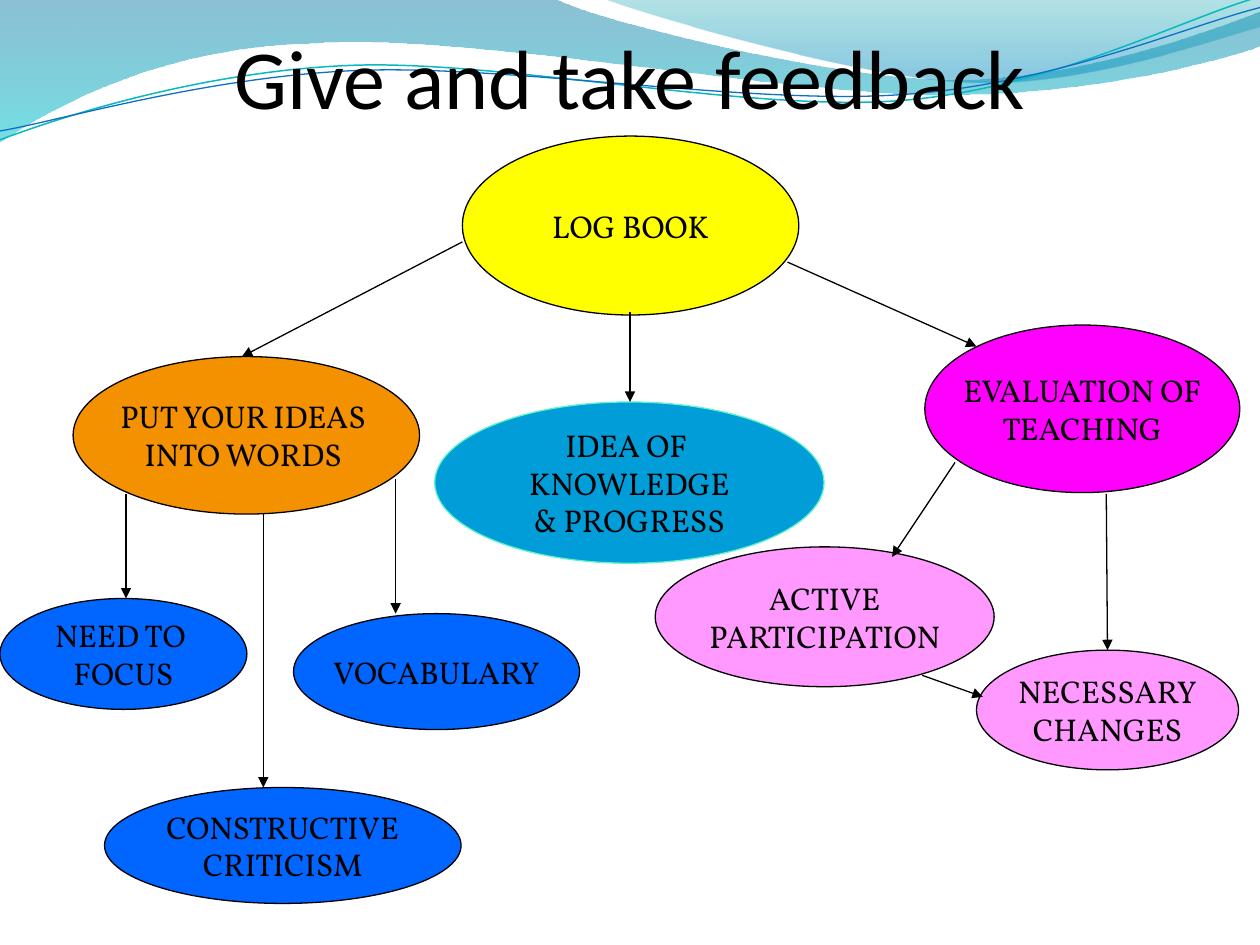
from lxml.etree import SubElement
from pptx import Presentation
from pptx.dml.color import RGBColor
from pptx.enum.shapes import MSO_CONNECTOR, MSO_SHAPE
from pptx.enum.text import MSO_ANCHOR, PP_ALIGN
from pptx.oxml.ns import qn
from pptx.oxml.xmlchemy import OxmlElement
from pptx.util import Inches, Pt

COLORS = {
    "black": "000000", "yellow": "FFFF00", "orange": "F49100", "sky": "009DD9",
    "mint": "5FF3CA", "magenta": "FF00FF", "blue": "0066FF", "pink": "FF99FF",
    "deep": "0074A1", "cyan": "00C6CF", "teal": "00A1A9", "ocean": "008BBF",
    "teal line": "0AB8BF", "blue line": "0F6FC6",
}

# A step of two numbers is a straight line; six numbers are a Bézier curve.
# Gradient stops are position, colour and opacity in percent.
BANDS = [
    ([(0, 0), (4.4, -0.01), (4.76, 0.17, 6.64, 0.63, 7.58, 0.63),
      (8.53, 0.63, 9.58, 0.26, 10, 0.09), (10.01, 0.36),
      (9.83, 0.44, 8.7, 0.76, 7.46, 0.75), (6.22, 0.75, 3.82, 0.28, 2.57, 0.34),
      (1.29, 0.36, 0.46, 0.83, -0.01, 1.13), (0, 0)],
     [(0, "deep", 45), (1, "cyan", 55)]),
    ([(4.79, -0.01), (5.09, 0.11, 6.82, 0.62, 7.69, 0.65),
      (8.56, 0.69, 9.61, 0.32, 10, 0.21), (10, 0), (4.79, -0.01)],
     [(0, "teal", 30), (0.8, "ocean", 45)]),
]
RIPPLES = [
    ([(0, 1.11), (0.48, 0.93, 1.58, 0.57, 2.77, 0.52),
      (3.95, 0.47, 5.93, 0.89, 7.13, 0.8), (8.33, 0.71, 9.38, 0.15, 9.98, -0.02)],
     "teal line", 0.85),
    ([(0, 1.04), (0.47, 0.96, 1.64, 0.61, 2.83, 0.56),
      (4.03, 0.51, 5.97, 0.84, 7.17, 0.75), (8.36, 0.67, 9.41, 0.21, 10, 0.06)],
     "blue line", 0.75),
]
BUBBLES = [
    (["LOG BOOK"], (3.67, 1.08, 2.67, 1.42), "yellow", "black"),
    (["PUT YOUR IDEAS ", "INTO WORDS "], (0.58, 2.83, 2.75, 1.25), "orange", "black"),
    (["IDEA OF ", "KNOWLEDGE", "& PROGRESS"], (3.45, 3.19, 3.09, 1.28), "sky", "mint"),
    (["EVALUATION OF", "TEACHING"], (7.34, 2.58, 2.5, 1.33), "magenta", "black"),
    (["NEED TO ", "FOCUS"], (0, 4.75, 1.96, 0.88), "blue", "black"),
    (["VOCABULARY"], (2.33, 4.87, 2.27, 0.92), "blue", "black"),
    (["ACTIVE", "PARTICIPATION"], (5.2, 4.34, 2.69, 1.11), "pink", "black"),
    (["NECESSARY", "CHANGES"], (7.75, 5.16, 2.08, 0.95), "pink", "black"),
    (["CONSTRUCTIVE", "CRITICISM"], (0.83, 6.25, 2.83, 0.92), "blue", "black"),
]
ARROWS = [
    (6.25, 2.08, 7.75, 2.75), (5, 2.48, 5, 3.19), (3.67, 1.92, 1.92, 2.83),
    (8.78, 3.92, 8.79, 5.16), (7.32, 5.36, 7.8, 5.53), (7.58, 3.67, 7.08, 4.42),
    (1, 3.92, 1, 4.75), (2.09, 4.07, 2.09, 6.25), (3.14, 3.8, 3.14, 4.87),
]


def rgb(name):
    return RGBColor.from_string(COLORS[name])


def set_line(line, color, width=0.75):
    line.color.rgb = rgb(color)
    line.width = Pt(width)


def write_lines(tf, lines, font_name, size):
    for i, text in enumerate(lines):
        p = tf.paragraphs[0] if i == 0 else tf.add_paragraph()
        p.alignment = PP_ALIGN.CENTER
        r = p.add_run()
        r.text = text
        for key, value in {"name": font_name, "size": Pt(size)}.items():
            setattr(r.font, key, value)
        r.font.color.rgb = rgb("black")


def bend_segments(sp, steps):
    """Join the three straight segments of each curved step into one Bézier."""
    segments = iter(list(sp.element.iter(qn("a:lnTo"))))
    for step in steps[1:]:
        group = [next(segments) for _ in range(len(step) // 2)]
        if len(group) == 3:
            curve = OxmlElement("a:cubicBezTo")
            group[0].addprevious(curve)
            for segment in group:
                curve.append(segment[0])
                segment.getparent().remove(segment)


def add_outline(s, left, top, steps, close):
    points = [(Inches(left + step[i]), Inches(top + step[i + 1]))
              for step in steps for i in range(0, len(step), 2)]
    builder = s.shapes.build_freeform(*points[0])
    builder.add_line_segments(points[1:], close=close)
    sp = builder.convert_to_shape()
    sp.shadow.inherit = False
    bend_segments(sp, steps)
    return sp


def fill_gradient(sp, stops):
    sp.fill.gradient()
    sp.fill.gradient_angle = 270
    for stop, (position, color, _) in zip(sp.fill.gradient_stops, stops):
        stop.position = position
        stop.color.rgb = rgb(color)
    colors = sp.element.spPr.find(qn("a:gradFill")).iter(qn("a:srgbClr"))
    for color, (_, _, opacity) in zip(colors, stops):
        SubElement(color, qn("a:alpha"), val=str(opacity * 1000))


def draw_waves(s, left, top):
    for steps, stops in BANDS:
        sp = add_outline(s, left, top, steps, close=True)
        fill_gradient(sp, stops)
        sp.line.fill.background()
    for steps, color, width in RIPPLES:
        sp = add_outline(s, left, top, steps, close=False)
        sp.fill.background()
        set_line(sp.line, color, width)


def draw_title(s, left, top, width, height):
    box = s.shapes.add_textbox(*map(Inches, (left, top, width, height)))
    tf = box.text_frame
    settings = {"word_wrap": True, "vertical_anchor": MSO_ANCHOR.BOTTOM,
                "margin_left": 0, "margin_right": 0,
                "margin_top": Inches(0.05), "margin_bottom": 0}
    for key, value in settings.items():
        setattr(tf, key, value)
    write_lines(tf, ["Give and take feedback"], "Calibri", 48)


def add_bubble(s, lines, box, fill, line):
    sp = s.shapes.add_shape(MSO_SHAPE.OVAL, *map(Inches, box))
    sp.shadow.inherit = False
    sp.fill.solid()
    sp.fill.fore_color.rgb = rgb(fill)
    set_line(sp.line, line)
    tf = sp.text_frame
    tf.word_wrap = False
    tf.vertical_anchor = MSO_ANCHOR.MIDDLE
    write_lines(tf, lines, "Vollkorn", 18)


def add_arrow(s, ends):
    arrow = s.shapes.add_connector(MSO_CONNECTOR.STRAIGHT, *map(Inches, ends))
    set_line(arrow.line, "black")
    spPr = arrow.element.spPr
    SubElement(spPr.find(qn("a:ln")), qn("a:tailEnd"), type="triangle")
    SubElement(spPr, qn("a:effectLst"))


def draw_mind_map(s, left, top):
    for lines, (x, y, width, height), fill, line in BUBBLES:
        add_bubble(s, lines, (left + x, top + y, width, height), fill, line)
    for x1, y1, x2, y2 in ARROWS:
        add_arrow(s, (left + x1, top + y1, left + x2, top + y2))


def main():
    prs = Presentation()
    prs.slide_width, prs.slide_height = Inches(10), Inches(7.5)
    s = prs.slides.add_slide(prs.slide_layouts[6])
    draw_waves(s, 0, 0)
    draw_title(s, 0.5, 0.13, 9, 0.87)
    draw_mind_map(s, 0, 0)
    prs.save("out.pptx")


if __name__ == "__main__":
    main()
